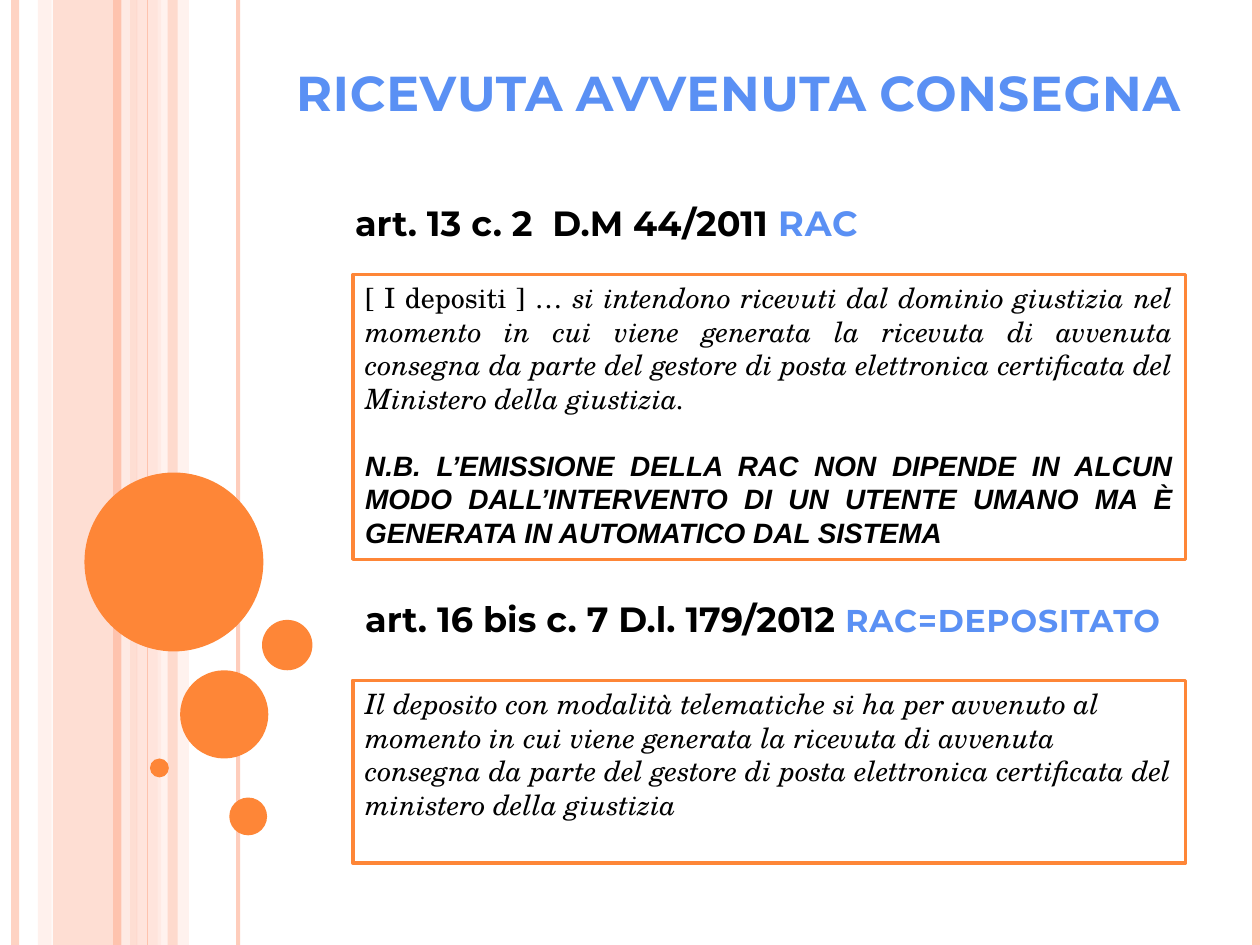
from typing import NamedTuple

from lxml.etree import SubElement
from pptx import Presentation
from pptx.dml.color import RGBColor as Rgb
from pptx.enum.shapes import MSO_CONNECTOR as Conn, MSO_SHAPE as Kind
from pptx.enum.text import MSO_ANCHOR as Anchor, PP_ALIGN as Align
from pptx.oxml.ns import qn
from pptx.util import Inches, Pt

WIDE, HIGH = 10, 7.5
COLORS = {
    "rose": "FEC3AE", "pink": "FFD9CE", "pale": "FFEDE8", "white": "FFFFFF",
    "orange": "FE8637", "blue": "5A90F4", "black": "000000",
}
HEAD, BODY, NOTE = "Montserrat", "TeX Gyre Schola", "Arial"


class Band(NamedTuple):
    left: float
    width: float
    color: str
    alpha: int


class Rule(NamedTuple):
    x: float
    weight: float
    color: str
    alpha: int = 100


class Disc(NamedTuple):
    left: float
    top: float
    size: float


class Box(NamedTuple):
    left: float
    top: float
    width: float
    height: float


BANDS = [
    Band(0.42, 0.67, "rose", 54), Band(0.3, 0.11, "pink", 36),
    Band(1.08, 0.2, "pink", 70), Band(1.25, 0.25, "pale", 71),
]
RULES = [
    Rule(0.12, 4.5, "rose", 73), Rule(1, 4.5, "pale", 83),
    Rule(0.93, 4.5, "rose"), Rule(1.89, 2.25, "rose", 82),
    Rule(1.17, 0.75, "rose"), Rule(9.97, 4.5, "rose"),
]
FRONT = Band(1.33, 0.08, "rose", 51)
DISCS = [
    Disc(0.67, 3.75, 1.42), Disc(1.43, 5.32, 0.7), Disc(1.19, 6.02, 0.15),
    Disc(1.82, 6.33, 0.3), Disc(2.08, 4.92, 0.4),
]


def paint(fill, color: str, alpha: int = 100) -> None:
    """Fill with a named colour at an opacity in percent."""
    fill.solid()
    fill.fore_color.rgb = Rgb.from_string(COLORS[color])
    if alpha < 100:
        tint = fill._xPr.find(".//" + qn("a:srgbClr"))
        SubElement(tint, qn("a:alpha"), val=str(alpha * 1000))


def draw_shape(slide, kind, box: Box, color: str, alpha: int = 100):
    shape = slide.shapes.add_shape(kind, *map(Inches, box))
    shape.shadow.inherit = False
    paint(shape.fill, color, alpha)
    shape.line.fill.background()
    return shape


def draw_band(slide, band: Band) -> None:
    box = Box(band.left, 0, band.width, HIGH)
    draw_shape(slide, Kind.RECTANGLE, box, band.color, band.alpha)


def draw_rule(slide, rule: Rule) -> None:
    x = Inches(rule.x)
    line = slide.shapes.add_connector(Conn.STRAIGHT, x, 0, x, Inches(HIGH))
    line.line.width = Pt(rule.weight)
    paint(line.line.fill, rule.color, rule.alpha)
    SubElement(line._element.spPr, qn("a:effectLst"))


def draw_frame(slide, box: Box):
    """Add a white box with an orange edge and return its text frame."""
    shape = draw_shape(slide, Kind.RECTANGLE, box, "white")
    paint(shape.line.fill, "orange")
    shape.line.width = Pt(2)
    return set_frame(shape.text_frame)


def draw_text(slide, box: Box, anchor=Anchor.TOP):
    return set_frame(slide.shapes.add_textbox(*map(Inches, box)).text_frame, anchor)


def set_frame(frame, anchor=Anchor.TOP):
    frame.word_wrap = True
    frame.vertical_anchor = anchor
    return frame


def add_run(para, text: str, *, size: float = 16, font: str = BODY,
            color: str = "black", bold: bool = False, italic: bool = False,
            space: float = 0, small: bool = False) -> None:
    run = para.add_run()
    run.text = text
    face = run.font
    face.size, face.name, face.bold, face.italic = Pt(size), font, bold, italic
    face.color.rgb = Rgb.from_string(COLORS[color])
    props = run._r.get_or_add_rPr()
    if space:
        props.set("spc", str(round(space * 100)))
    if small:
        props.set("cap", "small")


def add_head(slide, box: Box, law: str, tag: str, size: float) -> None:
    """Write a law reference followed by its blue tag."""
    para = draw_text(slide, box).paragraphs[0]
    para.alignment = Align.LEFT
    add_run(para, law, size=20, font=HEAD, bold=True)
    add_run(para, tag, size=size, font=HEAD, bold=True, color="blue", space=0.5)


def main() -> None:
    deck = Presentation()
    deck.slide_width, deck.slide_height = Inches(WIDE), Inches(HIGH)
    slide = deck.slides.add_slide(deck.slide_layouts[6])

    # Striped edge and bubbles
    for band in BANDS:
        draw_band(slide, band)
    for rule in RULES:
        draw_rule(slide, rule)
    draw_band(slide, FRONT)
    for disc in DISCS:
        draw_shape(slide, Kind.OVAL, Box(*disc, disc.size), "orange")

    # Title
    title = draw_text(slide, Box(1.93, 0.22, 7.72, 0.79), Anchor.BOTTOM)
    para = title.paragraphs[0]
    para.alignment = Align.RIGHT
    add_run(para, "RICEVUTA AVVENUTA CONSEGNA", size=28, font=HEAD,
            color="blue", bold=True, space=0.5, small=True)

    # Law references
    add_head(slide, Box(2.72, 1.55, 6.93, 0.77),
             "art. 13 c. 2  D.M 44/2011 ", "RAC", 20)
    add_head(slide, Box(2.8, 4.69, 6.61, 1.08),
             "art. 16 bis c. 7 D.l. 179/2012 ", "RAC=DEPOSITATO", 18)

    # First quotation and its remark
    frame = draw_frame(slide, Box(2.8, 2.18, 6.61, 2.26))
    quote, note = frame.paragraphs[0], frame.add_paragraph()
    quote.alignment = note.alignment = Align.JUSTIFY
    note.space_before = Pt(19)
    add_run(quote, "[ I depositi ] … ")
    add_run(quote, "si intendono ricevuti dal dominio giustizia nel momento in "
            "cui viene generata la ricevuta di avvenuta consegna da parte del "
            "gestore di posta elettronica certificata del Ministero della "
            "giustizia.", italic=True)
    add_run(note, "N.B. L’EMISSIONE DELLA RAC NON DIPENDE IN ALCUN MODO "
            "DALL’INTERVENTO DI UN UTENTE UMANO MA È GENERATA IN AUTOMATICO "
            "DAL SISTEMA", font=NOTE, bold=True, italic=True)

    # Second quotation
    para = draw_frame(slide, Box(2.8, 5.4, 6.61, 1.45)).paragraphs[0]
    para.alignment = Align.LEFT
    add_run(para, "Il deposito con modalità telematiche si ha per avvenuto al "
            "momento in cui viene generata la ricevuta di avvenuta consegna da "
            "parte del gestore di posta elettronica certificata del ministero "
            "della giustizia", italic=True)

    deck.save("out.pptx")


if __name__ == "__main__":
    main()
